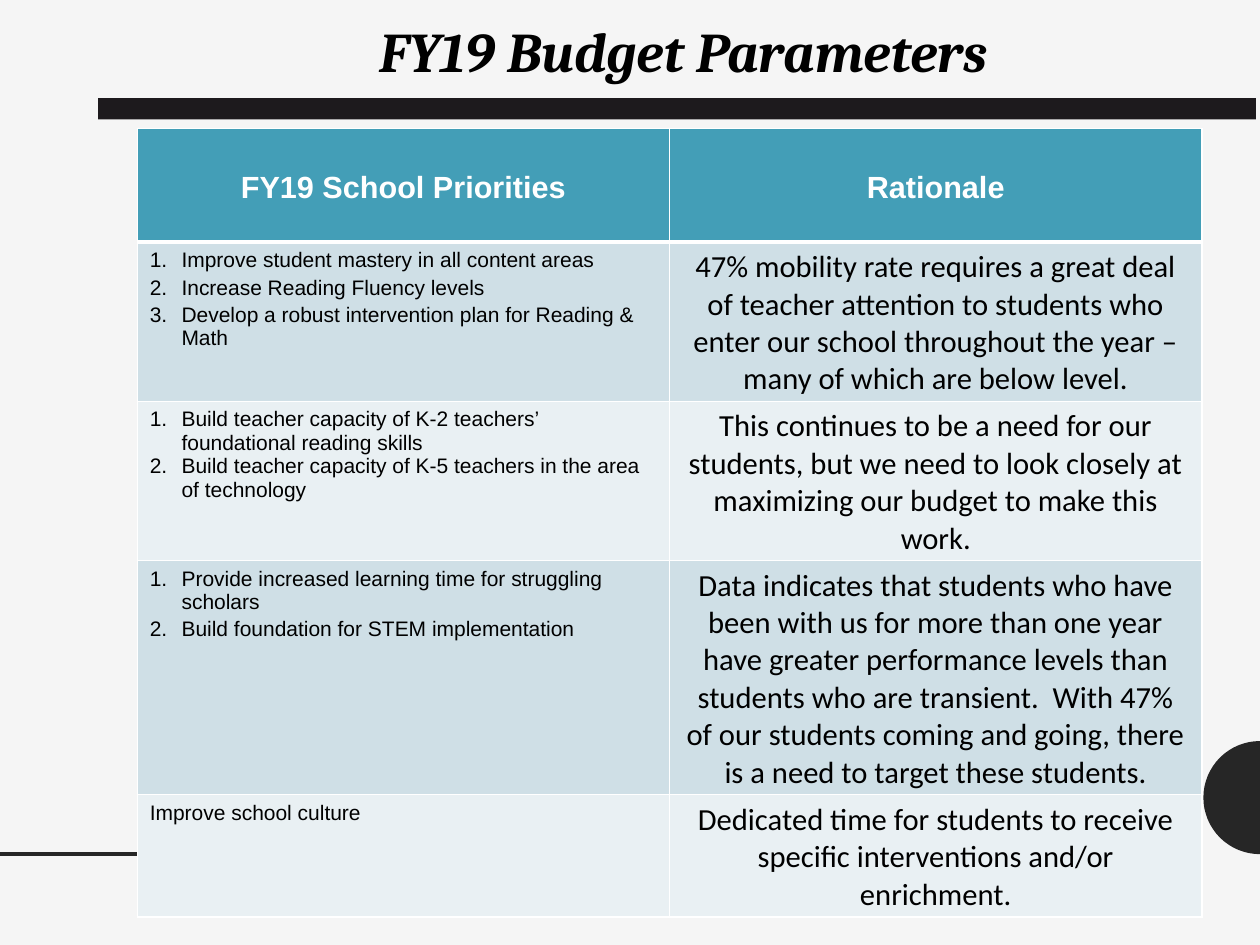
from dataclasses import dataclass
from math import cos, pi, sin

from lxml.etree import SubElement
from pptx import Presentation
from pptx.dml.color import RGBColor
from pptx.enum.shapes import MSO_CONNECTOR, MSO_SHAPE
from pptx.enum.text import MSO_ANCHOR, PP_ALIGN
from pptx.oxml.ns import qn
from pptx.util import Cm, Pt


@dataclass(frozen=True)
class Theme:
    background: str = "F5F5F5"
    dark: str = "262626"
    bar: str = "1D1A1D"
    header: str = "439EB7"
    bands: tuple = ("CFDFE6", "E9F0F3")
    white: str = "FFFFFF"
    black: str = "000000"
    title_font: str = "Cambria"
    list_font: str = "Arial"
    rationale_font: str = "Calibri"
    title_size: float = 32
    large_size: float = 17.5
    list_size: float = 12


THEME = Theme()
ROW_HEIGHTS = (2.29, 3.21, 3.21, 4.72, 2.47)
HEADINGS = ("FY19 School Priorities", "Rationale")
PRIORITIES = (
    (
        ("Improve student mastery in all content areas",
         "Increase Reading Fluency levels",
         "Develop a robust intervention plan for Reading & Math"),
        "47% mobility rate requires a great deal of teacher attention to students "
        "who enter our school throughout the year – many of which are below level.",
        2.2,
    ),
    (
        ("Build teacher capacity of K-2 teachers’ foundational reading skills",
         "Build teacher capacity of K-5 teachers in the area of technology"),
        "This continues to be a need for our students, but we need to look closely "
        "at maximizing our budget to make this work.",
        0,
    ),
    (
        ("Provide increased learning time for struggling scholars",
         "Build foundation for STEM implementation"),
        "Data indicates that students who have been with us for more than one year "
        "have greater performance levels than students who are transient.  With 47% "
        "of our students coming and going, there is a need to target these students.",
        2.2,
    ),
    (
        ("Improve school culture",),
        "Dedicated time for students to receive specific interventions and/or "
        "enrichment.",
        0,
    ),
)


def color(value):
    return RGBColor.from_string(value)


def write_text(frame, lines, font, size, fill=THEME.black, bold=False, italic=False,
               alignment=PP_ALIGN.LEFT, numbered=False, space_after=0):
    for index, line in enumerate(lines):
        paragraph = frame.paragraphs[0] if index == 0 else frame.add_paragraph()
        paragraph.alignment = alignment
        paragraph.space_before = Pt(0)
        paragraph.space_after = Pt(space_after)
        if numbered:
            properties = paragraph._p.get_or_add_pPr()
            properties.set("marL", str(Cm(0.64)))
            properties.set("indent", str(-Cm(0.64)))
            SubElement(properties, qn("a:buAutoNum"), type="arabicPeriod")
        run = paragraph.add_run()
        run.text = line
        run.font.name = font
        run.font.size = Pt(size)
        run.font.bold = bold
        run.font.italic = italic
        run.font.color.rgb = color(fill)


def set_borders(cell, bottom_width):
    properties = cell._tc.get_or_add_tcPr()
    widths = {"a:lnL": 1, "a:lnR": 1, "a:lnT": 1, "a:lnB": bottom_width}
    for position, (tag, width) in enumerate(widths.items()):
        border = SubElement(properties, qn(tag), w=str(Pt(width)))
        fill = SubElement(border, qn("a:solidFill"))
        SubElement(fill, qn("a:srgbClr"), val=THEME.white)
        properties.insert(position, border)


def style_cell(cell, fill, bottom_width=1):
    cell.fill.solid()
    cell.fill.fore_color.rgb = color(fill)
    cell.margin_left = cell.margin_right = Cm(0.25)
    cell.margin_top, cell.margin_bottom = Cm(0.13), Cm(0.04)
    set_borders(cell, bottom_width)


def paint(shape, fill):
    shape.shadow.inherit = False
    shape.fill.solid()
    shape.fill.fore_color.rgb = color(fill)
    shape.line.fill.background()


def add_decoration(slide, left, top, width, height):
    radius = Cm(1.14)
    right, bottom = left + width, top + height
    center = bottom - radius
    steps = 32
    angles = [pi / 2 + pi * step / steps for step in range(steps + 1)]
    points = [(right + round(radius * cos(angle)), center + round(radius * sin(angle)))
              for angle in angles]
    builder = slide.shapes.build_freeform(*points[0])
    builder.add_line_segments(points[1:], close=True)
    paint(builder.convert_to_shape(), THEME.dark)

    line = slide.shapes.add_connector(MSO_CONNECTOR.STRAIGHT, left, bottom,
                                      left + Cm(9.37), bottom)
    line.line.color.rgb = color(THEME.dark)
    line.line.width = Pt(2)
    SubElement(line._element.spPr, qn("a:effectLst"))


def add_heading(slide, left, top, width, height):
    title = slide.shapes.title
    title.left, title.top = left + Cm(0.46), top
    title.width, title.height = width - Cm(0.66), Cm(1.63)
    frame = title.text_frame
    frame.word_wrap = True
    frame.vertical_anchor = MSO_ANCHOR.MIDDLE
    write_text(frame, ["FY19 Budget Parameters"], THEME.title_font, THEME.title_size,
               bold=True, italic=True, alignment=PP_ALIGN.CENTER)
    bar_height = Cm(0.43)
    bar = slide.shapes.add_shape(MSO_SHAPE.RECTANGLE, left, top + height - bar_height,
                                 width, bar_height)
    paint(bar, THEME.bar)


def add_priorities_table(slide, left, top, width, height):
    table = slide.shapes.add_table(len(ROW_HEIGHTS), len(HEADINGS),
                                   left, top, width, height).table
    for row, row_height in zip(table.rows, ROW_HEIGHTS):
        row.height = Cm(row_height)
    for column, heading in enumerate(HEADINGS):
        cell = table.cell(0, column)
        style_cell(cell, THEME.header, bottom_width=3)
        cell.vertical_anchor = MSO_ANCHOR.MIDDLE
        write_text(cell.text_frame, [heading], THEME.list_font, THEME.large_size,
                   fill=THEME.white, bold=True, alignment=PP_ALIGN.CENTER)
    for index, (goals, rationale, spacing) in enumerate(PRIORITIES):
        goal_cell, rationale_cell = table.rows[index + 1].cells
        for cell in (goal_cell, rationale_cell):
            style_cell(cell, THEME.bands[index % 2])
        write_text(goal_cell.text_frame, goals, THEME.list_font, THEME.list_size,
                   numbered=len(goals) > 1, space_after=spacing)
        write_text(rationale_cell.text_frame, [rationale], THEME.rationale_font,
                   THEME.large_size, alignment=PP_ALIGN.CENTER)


def main():
    presentation = Presentation()
    presentation.slide_width, presentation.slide_height = Cm(25.4), Cm(19.05)
    slide = presentation.slides.add_slide(presentation.slide_layouts[5])
    slide.background.fill.solid()
    slide.background.fill.fore_color.rgb = color(THEME.background)
    add_decoration(slide, Cm(0), Cm(14.94), Cm(25.4), Cm(2.28))
    add_heading(slide, Cm(1.98), Cm(0.2), Cm(23.34), Cm(2.21))
    add_priorities_table(slide, Cm(2.77), Cm(2.59), Cm(21.46), Cm(sum(ROW_HEIGHTS)))
    presentation.save("out.pptx")


if __name__ == "__main__":
    main()
